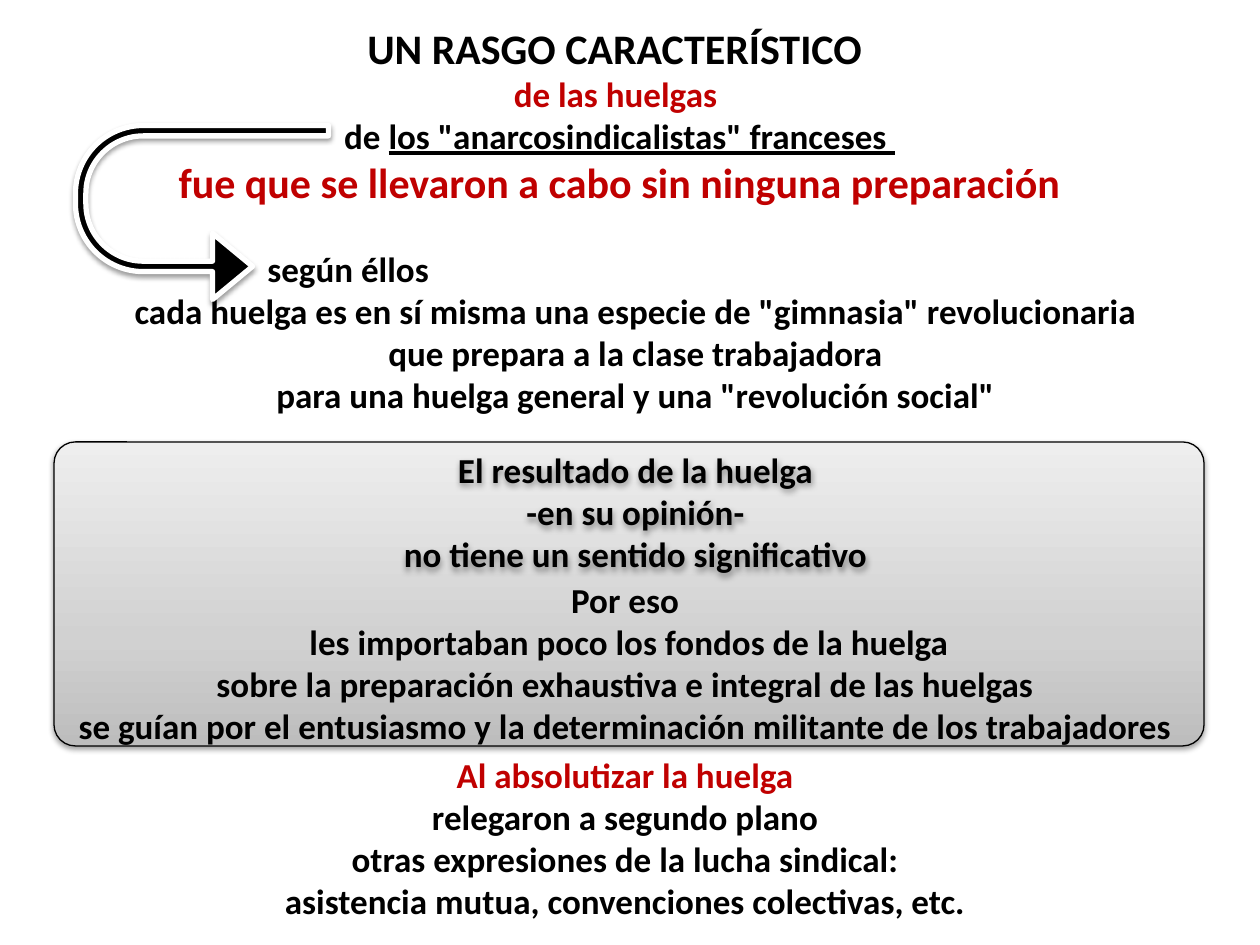
"""Builds a slide on the strikes of the French anarcho-syndicalists."""
from lxml import etree
from pptx import Presentation
from pptx.dml.color import RGBColor
from pptx.enum.shapes import MSO_SHAPE
from pptx.enum.text import MSO_AUTO_SIZE, PP_ALIGN
from pptx.oxml import parse_xml
from pptx.oxml.ns import nsdecls, qn
from pptx.util import Emu, Pt

CENTER, LEFT = PP_ALIGN.CENTER, PP_ALIGN.LEFT
ROUNDED, UTURN = MSO_SHAPE.ROUNDED_RECTANGLE, MSO_SHAPE.U_TURN_ARROW
GROW = MSO_AUTO_SIZE.SHAPE_TO_FIT_TEXT
EMU_PER_PX = 914400 / 126
BLACK, RED, WHITE = "000000", "C00000", "FFFFFF"
PANEL_STOPS = [(0, "BDBDBD"), (35, "D1D1D1"), (100, "EEEEEE")]


def px(length):
    return Emu(round(length * EMU_PER_PX))


def rgb(value):
    return RGBColor.from_string(value)


def add_shadow(shape):
    shape.shadow.inherit = False
    effects = shape._element.spPr.find(qn("a:effectLst"))
    shadow = etree.SubElement(
        effects, qn("a:outerShdw"), blurRad=str(Pt(3.1)), dist=str(Pt(1.6)),
        dir="5400000", rotWithShape="0")
    color = etree.SubElement(shadow, qn("a:srgbClr"), val=BLACK)
    etree.SubElement(color, qn("a:alpha"), val="38000")


def fill_gradient(shape, stops, angle):
    shape.fill.gradient()
    shape.fill.gradient_angle = 0
    gradient = shape._element.spPr.find(qn("a:gradFill"))
    gradient.find(qn("a:lin")).set("ang", str(angle * 60000))
    stop_list = gradient.find(qn("a:gsLst"))
    for old_stop in list(stop_list):
        stop_list.remove(old_stop)
    for position, color in stops:
        stop_list.append(parse_xml(
            f'<a:gs {nsdecls("a")} pos="{position * 1000}">'
            f'<a:srgbClr val="{color}"/></a:gs>'))


def add_outlined(slide, kind, box, adjustments, line, width):
    shape = slide.shapes.add_shape(kind, *map(px, box))
    for index, value in enumerate(adjustments):
        shape.adjustments[index] = value
    shape.line.color.rgb = rgb(line)
    shape.line.width = Pt(width)
    add_shadow(shape)
    return shape


def add_panel(slide):
    panel = add_outlined(slide, ROUNDED, (54, 442, 1150, 304), [0.07], BLACK, 0.75)
    fill_gradient(panel, PANEL_STOPS, 270)


def add_return_arrow(slide):
    arrow = add_outlined(slide, UTURN, (115, 86, 174, 253),
                         [0.06, 0.19, 0.23, 0.39, 0.7], WHITE, 3)
    arrow.fill.solid()
    arrow.fill.fore_color.rgb = rgb(BLACK)
    arrow.rotation = 90
    arrow._element.spPr.find(qn("a:xfrm")).set("flipV", "1")


def add_run(paragraph, text, size=20, color=BLACK, underline=None):
    run = paragraph.add_run()
    run.text = text
    font = run.font
    font.name, font.size, font.bold = "Calibri", Pt(size), True
    font.color.rgb = rgb(color)
    font.underline = underline


def add_text(slide, box, lines, indent=0):
    """Each line is a string or a list of (text, format) runs; indent moves the first line."""
    textbox = slide.shapes.add_textbox(*map(px, box))
    frame = textbox.text_frame
    frame.word_wrap = True
    frame.auto_size = GROW
    for index, line in enumerate(lines):
        paragraph = frame.add_paragraph() if index else frame.paragraphs[0]
        paragraph.alignment = CENTER
        if indent and index == 0:
            paragraph.alignment = LEFT
            paragraph._p.get_or_add_pPr().set("marL", str(px(indent)))
        for text, style in [(line, {})] if isinstance(line, str) else line:
            add_run(paragraph, text, **style)
    return textbox


def main():
    prs = Presentation()
    prs.slide_width, prs.slide_height = px(1260), px(945)
    slide = prs.slides.add_slide(prs.slide_layouts[6])

    add_panel(slide)
    add_text(slide, (54, 16, 1131, 199), [
        [("UN RASGO CARACTERÍSTICO ", {"size": 24})],
        [("de las huelgas ", {"color": RED})],
        [("de ", {}), ('los "anarcosindicalistas" franceses ', {"underline": True})],
        [("fue que se llevaron a cabo sin ninguna preparación",
          {"size": 24, "color": RED})],
    ])
    add_text(slide, (74, 241, 1131, 183), [
        "según éllos",
        'cada huelga es en sí misma una especie de "gimnasia" revolucionaria ',
        "que prepara a la clase trabajadora ",
        'para una huelga general y una "revolución social" ',
    ], indent=181)
    add_return_arrow(slide)
    result = add_text(slide, (273, 442, 725, 140), [
        "El resultado de la huelga",
        "-en su opinión-",
        "no tiene un sentido significativo",
    ])
    add_shadow(result)
    add_text(slide, (54, 572, 1142, 183), [
        "Por eso",
        " les importaban poco los fondos de la huelga",
        "sobre la preparación exhaustiva e integral de las huelgas",
        "se guían por el entusiasmo y la determinación militante de los trabajadores",
    ])
    add_text(slide, (54, 747, 1142, 183), [
        [("Al absolutizar la huelga", {"color": RED})],
        "relegaron a segundo plano",
        "otras expresiones de la lucha sindical:",
        "asistencia mutua, convenciones colectivas, etc.",
    ])
    prs.save("out.pptx")


if __name__ == "__main__":
    main()
